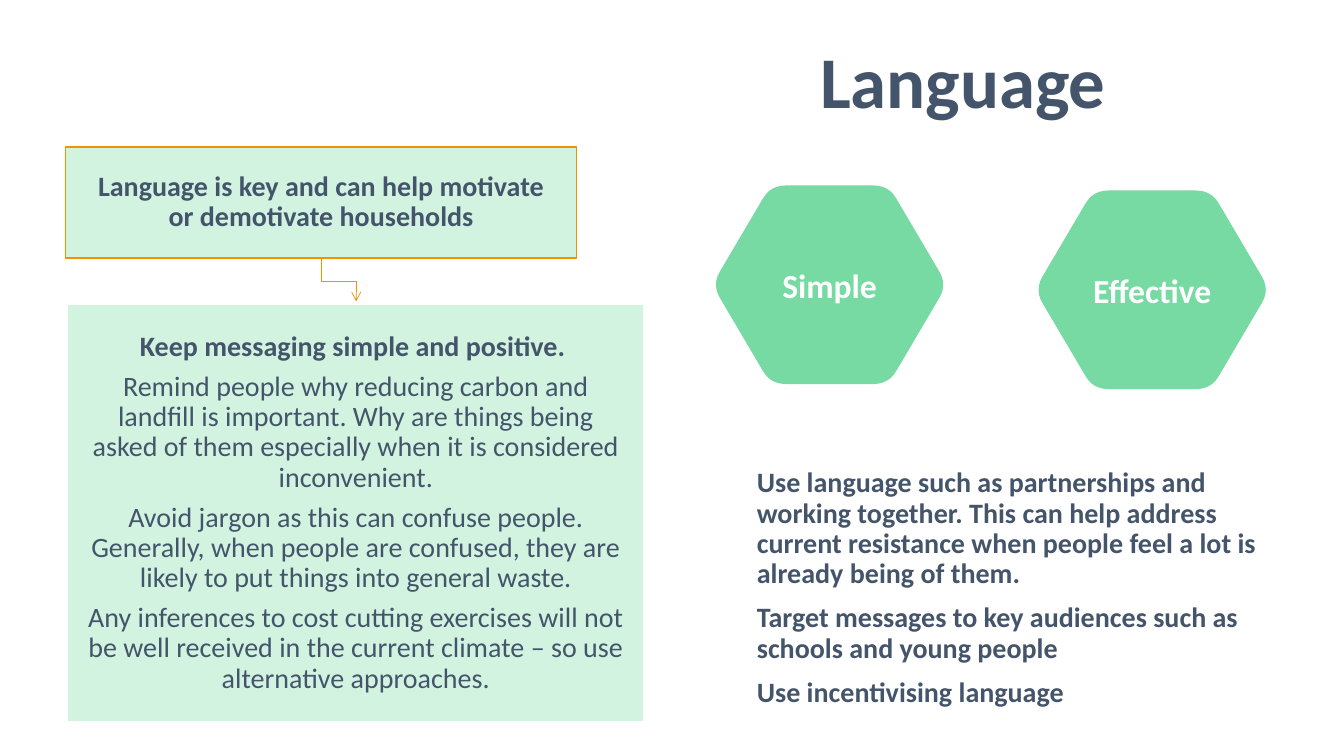
import math

import pptx
import pptx.dml.color
import pptx.enum.shapes
import pptx.enum.text
import pptx.oxml
import pptx.oxml.ns
import pptx.util

COLUMNS, ROWS = 40, 30
COLORS = {"ink": "44546A", "white": "FFFFFF", "mint": "D1F3E0",
          "green": "76DAA2", "orange": "F39200"}
MIDDLE = pptx.enum.text.MSO_ANCHOR.MIDDLE
CENTER = pptx.enum.text.PP_ALIGN.CENTER
Pt = pptx.util.Pt
Inches = pptx.util.Inches


def assign(target, values):
    for name, value in values.items():
        setattr(target, name, value)


def rgb(name):
    return pptx.dml.color.RGBColor.from_string(COLORS[name])


def rounded_hexagon(width=2.33, height=1.97, top=1.17, cut=0.15, steps=6):
    x, y, t = width / 2, height / 2, top / 2
    corners = [(-x, 0), (-t, -y), (t, -y), (x, 0), (t, y), (-t, y)]
    points = []
    for i, (cx, cy) in enumerate(corners):
        ends = []
        for nx, ny in (corners[i - 1], corners[(i + 1) % 6]):
            share = cut / math.hypot(nx - cx, ny - cy)
            ends.append((cx + (nx - cx) * share, cy + (ny - cy) * share))
        (ax, ay), (bx, by) = ends
        for step in range(steps + 1):
            s = step / steps
            a, c, b = (1 - s) ** 2, 2 * s * (1 - s), s ** 2
            points.append((a * ax + c * cx + b * bx, a * ay + c * cy + b * by))
    return points


class LanguageSlide:
    font = {"name": "Calibri", "bold": True}
    box_margins = {"margin_left": Inches(0.17), "margin_right": Inches(0.17),
                   "margin_top": Inches(0.18), "margin_bottom": Inches(0.18)}
    hexagon_margins = {"margin_left": Inches(0.03), "margin_right": Inches(0.03),
                       "margin_top": Inches(0.03), "margin_bottom": Inches(0.03)}

    def __init__(self, deck):
        self.column = deck.slide_width / COLUMNS
        self.row = deck.slide_height / ROWS
        self.shapes = deck.slides.add_slide(deck.slide_layouts[6]).shapes

    def place(self, column, row):
        return round(column * self.column), round(row * self.row)

    def fill_text(self, shape, paragraphs, size, color="ink", frame=None, **layout):
        text = shape.text_frame
        assign(text, {"word_wrap": True, **(frame or {})})
        for i, (words, bold) in enumerate(paragraphs):
            paragraph = text.add_paragraph() if i else text.paragraphs[0]
            assign(paragraph, layout)
            run = paragraph.add_run()
            run.text = words
            assign(run.font, {**self.font, "size": Pt(size), "bold": bold})
            run.font.color.rgb = rgb(color)

    def paint(self, shape, fill=None, line=None, width=1):
        shape.shadow.inherit = False
        if fill:
            shape.fill.solid()
            shape.fill.fore_color.rgb = rgb(fill)
        else:
            shape.fill.background()
        if line:
            shape.line.color.rgb = rgb(line)
            shape.line.width = Pt(width)
        else:
            shape.line.fill.background()

    def text(self, area, paragraphs, size, frame=None, **layout):
        box = self.shapes.add_textbox(*self.place(*area[:2]), *self.place(*area[2:]))
        self.fill_text(box, paragraphs, size, frame=frame, **layout)

    def box(self, area, paragraphs, line):
        panel = self.shapes.add_shape(pptx.enum.shapes.MSO_SHAPE.RECTANGLE,
                                      *self.place(*area[:2]), *self.place(*area[2:]))
        self.paint(panel, "mint", line)
        self.fill_text(panel, paragraphs, 20,
                       frame={"vertical_anchor": MIDDLE, **self.box_margins},
                       alignment=CENTER, line_spacing=0.9, space_after=Pt(7))

    def outline(self, points, close):
        builder = self.shapes.build_freeform(*points[0])
        builder.add_line_segments(points[1:], close=close)
        return builder.convert_to_shape()

    def hexagon(self, column, row, word):
        x, y = self.place(column, row)
        points = [(x + Inches(dx), y + Inches(dy)) for dx, dy in rounded_hexagon()]
        quality = self.outline(points, True)
        self.paint(quality, "green")
        self.fill_text(quality, [(word, True)], 24, "white",
                       {"vertical_anchor": MIDDLE, **self.hexagon_margins},
                       alignment=CENTER)

    def bent_arrow(self, start, end):
        (x1, y1), (x2, y2) = start, end
        bend = (y1 + y2) / 2 + 0.06
        corners = [start, (x1, bend), (x2, bend), end]
        arrow = self.outline([self.place(*corner) for corner in corners], False)
        self.paint(arrow, line="orange", width=0.5)
        head = pptx.oxml.parse_xml(
            f'<a:tailEnd {pptx.oxml.ns.nsdecls("a")} type="arrow"/>')
        arrow.line._get_or_add_ln().append(head)


def main():
    deck = pptx.Presentation()
    assign(deck, {"slide_width": Inches(13.33), "slide_height": Inches(7.5)})
    slide = LanguageSlide(deck)

    slide.text((19.98, 0.88, 17.85, 4.96), [("Language ", True)], 52,
               {"vertical_anchor": MIDDLE}, alignment=CENTER, line_spacing=0.9)
    slide.text((22.23, 18.4, 15.84, 9.92), [
        ("Use language such as partnerships and working together. This can help "
         "address current resistance when people feel a lot is already being of them.", True),
        ("Target messages to key audiences such as schools and young people", True),
        ("Use incentivising language", True),
    ], 20, line_spacing=0.9, space_after=Pt(10))

    for column, row, word in [(24.69, 11.3, "Simple"), (34.29, 11.5, "Effective")]:
        slide.hexagon(column, row, word)

    slide.bent_arrow((9.55, 10.24), (10.6, 11.96))
    slide.box((1.95, 5.84, 15.21, 4.4), [
        ("Language is key and can help motivate or demotivate households", True),
    ], "orange")
    slide.box((2.01, 12.08, 17.16, 16.56), [
        ("Keep messaging simple and positive. ", True),
        ("Remind people why reducing carbon and landfill is important. Why are things "
         "being asked of them especially when it is considered inconvenient.", False),
        ("Avoid jargon as this can confuse people. Generally, when people are confused, "
         "they are likely to put things into general waste.", False),
        ("Any inferences to cost cutting exercises will not be well received in the "
         "current climate – so use alternative approaches.", False),
    ], "white")

    deck.save("out.pptx")


if __name__ == "__main__":
    main()
